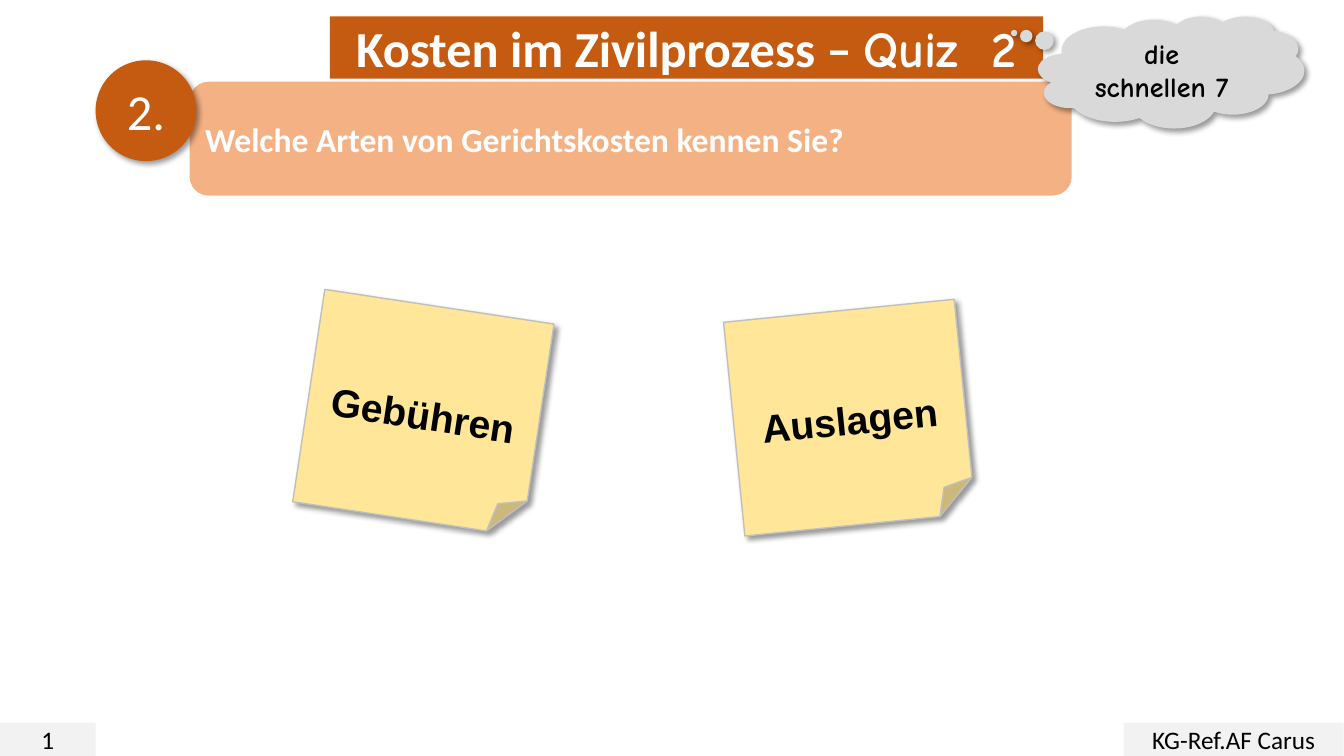
import dataclasses

import lxml.etree
import pptx
import pptx.dml.color
import pptx.enum.shapes
import pptx.enum.text
import pptx.oxml
import pptx.oxml.ns
import pptx.shapes.autoshape
import pptx.shapes.shapetree
import pptx.util

Cm = pptx.util.Cm
Pt = pptx.util.Pt
Kind = pptx.enum.shapes.MSO_SHAPE
Align = pptx.enum.text.PP_ALIGN

ORANGE = "C55A11"
PEACH = "F4B183"
YELLOW = "FFE699"
GREY = "F2F2F2"
WHITE = "FFFFFF"
BLACK = "000000"


@dataclasses.dataclass
class Span:
    text: str
    size: float
    font: str = "Calibri"
    colour: str = BLACK
    bold: bool = False
    spacing: float = 0


@dataclasses.dataclass
class Box:
    kind: Kind
    left: float
    top: float
    width: float
    height: float
    fill: str
    spans: list[Span]
    align: Align = Align.CENTER
    line: str = ""
    shadow: bool = False
    rotation: float = 0
    top_inset: float = 0.13
    adjustments: tuple[float, ...] = ()


def rgb(colour: str) -> pptx.dml.color.RGBColor:
    return pptx.dml.color.RGBColor.from_string(colour)


def write_spans(shape: pptx.shapes.autoshape.Shape, box: Box) -> None:
    frame = shape.text_frame
    frame.word_wrap = True
    frame.auto_size = pptx.enum.text.MSO_AUTO_SIZE.NONE
    frame.vertical_anchor = pptx.enum.text.MSO_ANCHOR.MIDDLE
    frame.margin_top = Cm(box.top_inset)
    para = frame.paragraphs[0]
    para.alignment = box.align
    for span in box.spans:
        run = para.add_run()
        run.text = span.text
        run.font.size = Pt(span.size)
        run.font.name = span.font
        run.font.bold = span.bold
        run.font.color.rgb = rgb(span.colour)
        if span.spacing:
            run.font._element.set("spc", str(round(span.spacing * 100)))


def add_soft_shadow(shape: pptx.shapes.autoshape.Shape) -> None:
    effects = shape._element.spPr.find(pptx.oxml.ns.qn("a:effectLst"))
    effects.append(pptx.oxml.parse_xml(
        f'<a:outerShdw {pptx.oxml.ns.nsdecls("a")} blurRad="{Pt(4)}" '
        f'dist="{Pt(3)}" dir="2700000" algn="tl" rotWithShape="0">'
        f'<a:srgbClr val="{BLACK}"><a:alpha val="40000"/></a:srgbClr></a:outerShdw>'))


def style_shape(shape: pptx.shapes.autoshape.Shape, box: Box) -> None:
    shape.fill.solid()
    shape.fill.fore_color.rgb = rgb(box.fill)
    if box.line:
        shape.line.color.rgb = rgb(box.line)
        shape.line.width = Pt(1)
    else:
        shape.line.fill.background()
    shape.shadow.inherit = False
    if box.shadow:
        add_soft_shadow(shape)
    shape.rotation = box.rotation
    write_spans(shape, box)


def draw_box(shapes: pptx.shapes.shapetree._BaseGroupShapes, box: Box) -> None:
    shape = shapes.add_shape(box.kind, Cm(box.left), Cm(box.top),
                             Cm(box.width), Cm(box.height))
    for index, value in enumerate(box.adjustments):
        shape.adjustments[index] = value
    style_shape(shape, box)


def place_title(title: pptx.shapes.autoshape.Shape, box: Box) -> None:
    title.left, title.top = Cm(box.left), Cm(box.top)
    title.width, title.height = Cm(box.width), Cm(box.height)
    # Rounded outline for the placeholder, directly after its position
    outline = lxml.etree.Element(pptx.oxml.ns.qn("a:prstGeom"), prst="roundRect")
    lxml.etree.SubElement(outline, pptx.oxml.ns.qn("a:avLst"))
    title._element.spPr.insert(1, outline)
    style_shape(title, box)


def footer(left: float, width: float, text: str) -> Box:
    return Box(Kind.RECTANGLE, left, 18.21, width, 0.84, GREY, [Span(text, 18)])


def sticky_note(left: float, top: float, rotation: float, text: str) -> Box:
    return Box(Kind.FOLDED_CORNER, left, top, 5.84, 5.41, YELLOW,
               [Span(text, 28, "Arial", bold=True)],
               line="BFBFBF", shadow=True, rotation=rotation, top_inset=1.1)


TITLE = Box(Kind.ROUNDED_RECTANGLE, 8.31, 0.41, 17.98, 1.57, ORANGE, [
    Span("Kosten im Zivilprozess – ", 36, colour=WHITE, bold=True),
    Span("Quiz", 36, "Comic Neue", WHITE, True),
    Span(" ", 36, "Comic Neue", WHITE, True, spacing=11),
    Span("2", 36, "Comic Neue", WHITE, True),
])
FOOTERS = [footer(0, 2.41, "1"), footer(28.32, 5.54, "KG-Ref.AF Carus")]
QUESTION = [
    Box(Kind.ROUNDED_RECTANGLE, 4.78, 2.06, 22.23, 2.87, PEACH,
        [Span("Welche Arten von Gerichtskosten kennen Sie?", 24, colour=WHITE, bold=True)],
        align=Align.LEFT),
    Box(Kind.OVAL, 2.41, 1.52, 2.54, 2.54, ORANGE,
        [Span("2.", 36, colour=WHITE)], shadow=True),
]
CLOUD = Box(Kind.CLOUD_CALLOUT, 26.16, 0.41, 6.71, 2.82, "D9D9D9",
            [Span("die schnellen 7", 20, "Comic Neue", bold=True)],
            shadow=True, adjustments=(-0.59, -0.35))
ANSWERS = [sticky_note(7.75, 7.7, 8.6, "Gebühren"),
           sticky_note(18.49, 7.82, 354.3, "Auslagen")]


def main() -> None:
    deck = pptx.Presentation()
    deck.slide_width, deck.slide_height = Cm(33.87), Cm(19.05)
    page = deck.slides.add_slide(deck.slide_layouts[5])

    # Title and footers
    place_title(page.shapes.title, TITLE)
    for box in FOOTERS:
        draw_box(page.shapes, box)

    # Question with its number
    question = page.shapes.add_group_shape()
    for box in QUESTION:
        draw_box(question.shapes, box)

    # Cloud and answers
    for box in [CLOUD, *ANSWERS]:
        draw_box(page.shapes, box)

    deck.save("out.pptx")


if __name__ == "__main__":
    main()
